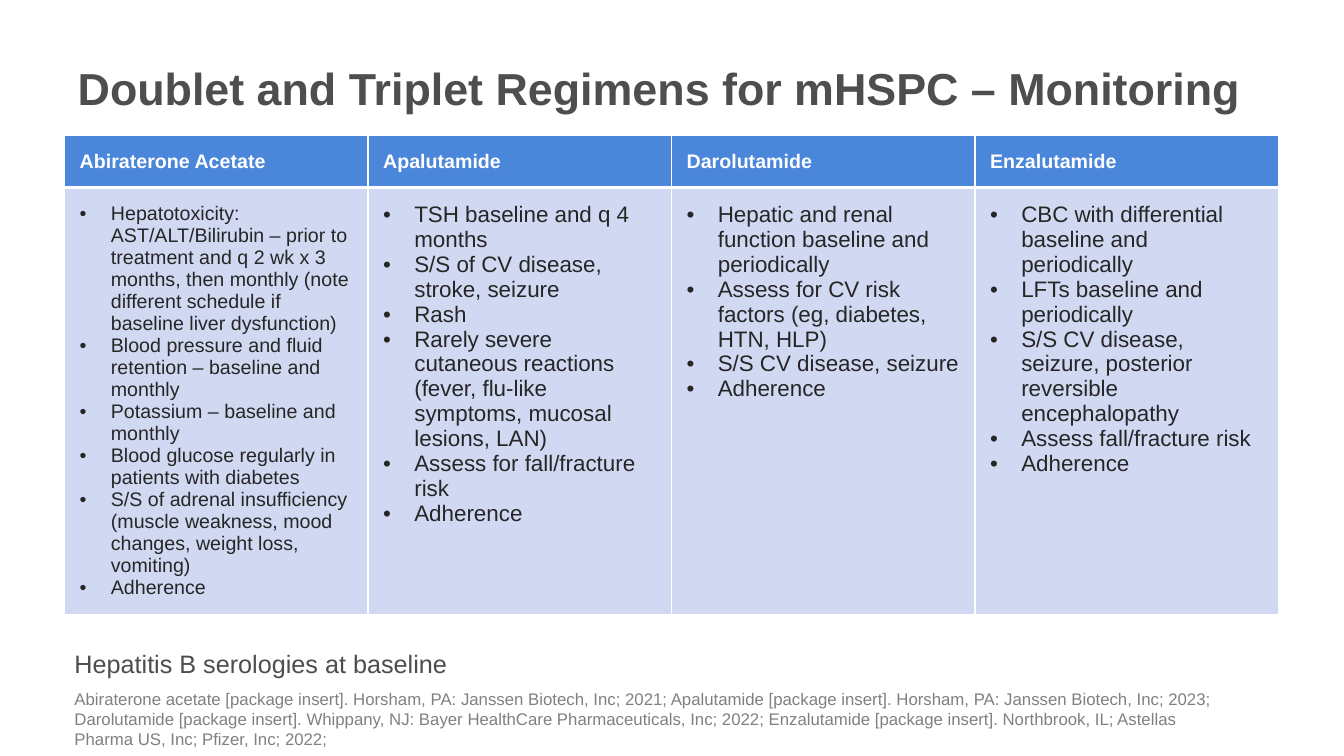
import pptx
import pptx.dml.color
import pptx.enum.text
import pptx.oxml.ns
import pptx.util
from lxml import etree

TITLE = "Doublet and Triplet Regimens for mHSPC – Monitoring"
# Drug, body text size, monitoring points
REGIMENS = [
    ("Abiraterone Acetate", 14, [
        "Hepatotoxicity: AST/ALT/Bilirubin – prior to treatment and q 2 wk x 3 months, "
        "then monthly (note different schedule if baseline liver dysfunction)",
        "Blood pressure and fluid retention – baseline and monthly",
        "Potassium – baseline and monthly",
        "Blood glucose regularly in patients with diabetes",
        "S/S of adrenal insufficiency (muscle weakness, mood changes, weight loss, vomiting)",
        "Adherence",
    ]),
    ("Apalutamide", 16, [
        "TSH baseline and q 4 months",
        "S/S of CV disease, stroke, seizure",
        "Rash",
        "Rarely severe cutaneous reactions (fever, flu-like symptoms, mucosal lesions, LAN)",
        "Assess for fall/fracture risk",
        "Adherence",
    ]),
    ("Darolutamide", 16, [
        "Hepatic and renal function baseline and periodically",
        "Assess for CV risk factors (eg, diabetes, HTN, HLP)",
        "S/S CV disease, seizure",
        "Adherence",
    ]),
    ("Enzalutamide", 16, [
        "CBC with differential baseline and periodically",
        "LFTs baseline and periodically",
        "S/S CV disease, seizure, posterior reversible encephalopathy",
        "Assess fall/fracture risk",
        "Adherence",
    ]),
]
BASELINE_NOTE = ["Hepatitis B serologies at baseline"]
REFERENCES = [
    "Abiraterone acetate [package insert]. Horsham, PA: Janssen Biotech, Inc; 2021; "
    "Apalutamide [package insert]. Horsham, PA: Janssen Biotech, Inc; 2023;",
    "Darolutamide [package insert]. Whippany, NJ: Bayer HealthCare Pharmaceuticals, Inc; 2022; "
    "Enzalutamide [package insert]. Northbrook, IL; Astellas Pharma US, Inc; Pfizer, Inc; 2022;",
]

LEFT = 0.64
TABLE_TOP, TABLE_WIDTH = 1.34, 12.04
ROW_HEIGHTS = [0.51, 4.23]
CELL_MARGIN, BULLET_INDENT = 0.15, 0.31
THIN, THICK = 1, 3

inch = pptx.util.Inches


def color(hex_text):
    return pptx.dml.color.RGBColor.from_string(hex_text)


def write(frame, lines, size, hex_text, bold=False, bullets=False):
    for index, line in enumerate(lines):
        para = frame.paragraphs[0] if index == 0 else frame.add_paragraph()
        para.text = line
        para.alignment = pptx.enum.text.PP_ALIGN.LEFT
        if bullets:
            props = para._p.get_or_add_pPr()
            props.set("marL", str(inch(BULLET_INDENT)))
            props.set("indent", str(-inch(BULLET_INDENT)))
            etree.SubElement(props, pptx.oxml.ns.qn("a:buFont"), typeface="Arial")
            etree.SubElement(props, pptx.oxml.ns.qn("a:buChar"), char="•")
        para.font.name = "Arial"
        para.font.size = pptx.util.Pt(size)
        para.font.bold = bold
        para.font.color.rgb = color(hex_text)


def style_cell(cell, fill, top, bottom):
    """Give a cell its margins, white borders and fill."""
    cell.margin_left = cell.margin_right = inch(CELL_MARGIN)
    cell.margin_top = cell.margin_bottom = inch(CELL_MARGIN)
    props = cell._tc.get_or_add_tcPr()
    for side, width in (("L", THIN), ("R", THIN), ("T", top), ("B", bottom)):
        border = etree.SubElement(props, pptx.oxml.ns.qn("a:ln" + side),
                                  w=str(pptx.util.Pt(width)))
        paint = etree.SubElement(border, pptx.oxml.ns.qn("a:solidFill"))
        etree.SubElement(paint, pptx.oxml.ns.qn("a:srgbClr"), val="FFFFFF")
    cell.fill.solid()
    cell.fill.fore_color.rgb = color(fill)


def add_text(page, top, width, height, lines, size, hex_text):
    box = page.shapes.add_textbox(inch(LEFT), inch(top), inch(width), inch(height))
    box.text_frame.word_wrap = True
    write(box.text_frame, lines, size, hex_text)


def add_regimens(page):
    frame = page.shapes.add_table(len(ROW_HEIGHTS), len(REGIMENS), inch(LEFT), inch(TABLE_TOP),
                                  inch(TABLE_WIDTH), inch(sum(ROW_HEIGHTS)))
    table = frame.table
    table.horz_banding = False
    for row, height in zip(table.rows, ROW_HEIGHTS):
        row.height = inch(height)
    for index, (drug, size, points) in enumerate(REGIMENS):
        table.columns[index].width = inch(TABLE_WIDTH / len(REGIMENS))
        header, body = table.cell(0, index), table.cell(1, index)
        style_cell(header, "4A86D9", THIN, THICK)
        write(header.text_frame, [drug], 14, "FFFFFF", bold=True)
        style_cell(body, "D0D9F1", THICK, THIN)
        write(body.text_frame, points, size, "262626", bullets=True)


def main():
    deck = pptx.Presentation()
    deck.slide_width, deck.slide_height = inch(13.33), inch(7.5)
    page = deck.slides.add_slide(deck.slide_layouts.get_by_name("Title Only"))

    title = page.shapes.title
    title.left, title.top, title.width, title.height = map(inch, (0.67, 0.22, 11.75, 1.3))
    title.text_frame.auto_size = pptx.enum.text.MSO_AUTO_SIZE.NONE
    title.text_frame.vertical_anchor = pptx.enum.text.MSO_ANCHOR.MIDDLE
    write(title.text_frame, [TITLE], 32, "4D4E4D", bold=True)

    add_regimens(page)
    add_text(page, 6.38, 11.32, 0.4, BASELINE_NOTE, 18, "4D4D4D")
    add_text(page, 6.78, 11.67, 0.71, REFERENCES, 12, "808080")
    deck.save("out.pptx")


if __name__ == "__main__":
    main()
